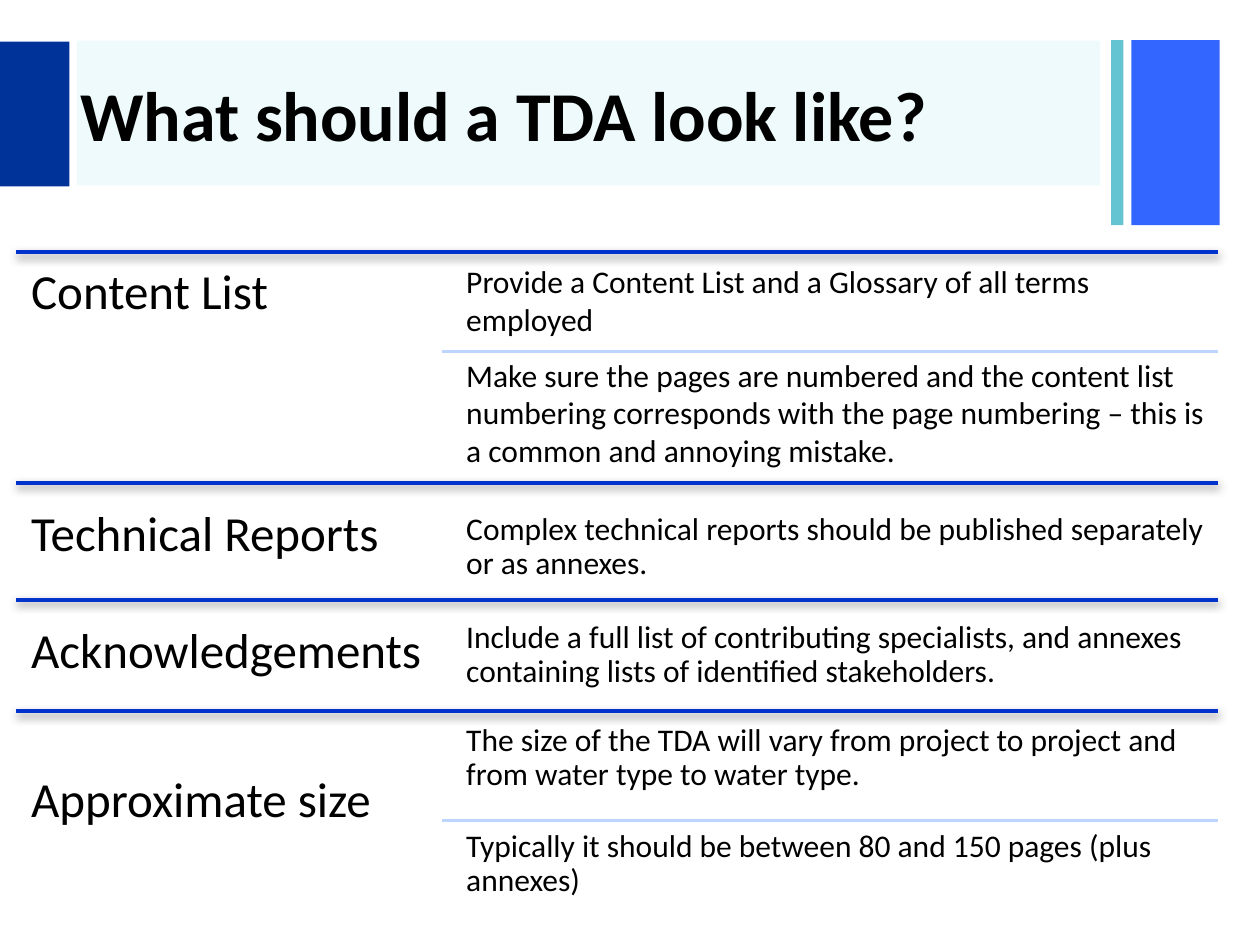
from dataclasses import dataclass

from lxml.etree import SubElement
from pptx import Presentation
from pptx.dml.color import RGBColor
from pptx.enum.shapes import MSO_CONNECTOR as Connector, MSO_SHAPE as Shape
from pptx.enum.text import MSO_ANCHOR as Anchor, MSO_AUTO_SIZE as AutoSize, PP_ALIGN as Align
from pptx.oxml.ns import qn
from pptx.util import Cm, Pt


@dataclass(frozen=True)
class Theme:
    font: str = "Calibri"
    ink: str = "000000"
    navy: str = "003399"
    blue: str = "3366FF"
    teal: str = "65C4D2"
    tint: str = "14C5D0"
    section_rule: str = "0033CC"
    detail_rule: str = "BDD4FF"
    shadow: str = "808080"
    title_size: float = 40
    topic_size: float = 28
    detail_size: float = 18
    section_weight: float = 2.25
    detail_weight: float = 2


THEME = Theme()
LEFT, RIGHT = 0.33, 24.56
TOPIC_WIDTH = 8.59
DETAIL_LEFT, DETAIL_WIDTH = 9.22, 15.34
TOPIC_INSET, DETAIL_INSET = 0.3, 0.18

BLOCKS = [
    (0, 0.84, 1.4, 2.92, THEME.navy, 100),
    (1.55, 0.82, 20.63, 2.92, THEME.tint, 7),
    (22.4, 0.81, 0.25, 3.73, THEME.teal, 100),
    (22.81, 0.81, 1.78, 3.73, THEME.blue, 100),
]

SECTIONS = [
    (5.08, "Content List", 5.08, [
        (5.11, 1.65, 1, "Provide a Content List and a Glossary of all terms employed"),
        (6.99, 2.6, 1, "Make sure the pages are numbered and the content list numbering "
                       "corresponds with the page numbering – this is a common and annoying mistake."),
    ]),
    (9.73, "Technical Reports", 9.96, [
        (10.16, 1.65, 0.9, "Complex technical reports should be published separately or as annexes."),
    ]),
    (12.09, "Acknowledgements", 12.32, [
        (12.34, 1.65, 0.9, "Include a full list of contributing specialists, and annexes "
                           "containing lists of identified stakeholders."),
    ]),
    (14.33, "Approximate size", 15.32, [
        (14.43, 1.65, 0.9, "The size of the TDA will vary from project to project and "
                           "from water type to water type."),
        (16.56, 1.65, 0.9, "Typically it should be between 80 and 150 pages (plus annexes)"),
    ]),
]
DETAIL_RULES = [7.09, 16.54]


def apply(target, values):
    for name, value in values.items():
        setattr(target, name, value)


def write(box, text, size, inset, spacing=1, bold=False, anchor=Anchor.TOP):
    frame = box.text_frame
    margins = {f"margin_{side}": Cm(inset) for side in ("left", "right", "top", "bottom")}
    apply(frame, {"word_wrap": True, "auto_size": AutoSize.NONE, "vertical_anchor": anchor, **margins})
    para = frame.paragraphs[0]
    apply(para, {"alignment": Align.LEFT, "line_spacing": spacing})
    span = para.add_run()
    span.text = text
    apply(span.font, {"name": THEME.font, "size": Pt(size), "bold": bold})
    span.font.color.rgb = RGBColor.from_string(THEME.ink)


def add_block(page, left, top, width, height, color, opacity):
    block = page.shapes.add_shape(Shape.RECTANGLE, Cm(left), Cm(top), Cm(width), Cm(height))
    block.shadow.inherit = False
    block.line.fill.background()
    block.fill.solid()
    block.fill.fore_color.rgb = RGBColor.from_string(color)
    if opacity < 100:
        tone = next(block.element.iter(qn("a:srgbClr")))
        SubElement(tone, qn("a:alpha"), val=str(opacity * 1000))


def add_rule(page, left, top, color, weight, shadowed=False):
    rule = page.shapes.add_connector(Connector.STRAIGHT, Cm(left), Cm(top), Cm(RIGHT), Cm(top))
    rule.line.color.rgb = RGBColor.from_string(color)
    rule.line.width = Pt(weight)
    effects = SubElement(rule.element.find(qn("p:spPr")), qn("a:effectLst"))
    if shadowed:
        shadow = SubElement(effects, qn("a:outerShdw"), blurRad=str(Pt(5)), dist=str(Pt(2)),
                            dir="5400000", rotWithShape="0")
        tone = SubElement(shadow, qn("a:srgbClr"), val=THEME.shadow)
        SubElement(tone, qn("a:alpha"), val="75000")


def add_text(page, left, top, width, height, text, size, inset, spacing):
    box = page.shapes.add_textbox(Cm(left), Cm(top), Cm(width), Cm(height))
    write(box, text, size, inset, spacing)


def add_title(page, text):
    title = page.shapes.title
    apply(title, {"left": Cm(1.37), "top": Cm(0.86), "width": Cm(21.01), "height": Cm(2.84)})
    write(title, text, THEME.title_size, 0.25, bold=True, anchor=Anchor.MIDDLE)
    title.element.getparent().append(title.element)


def add_section(page, rule_top, topic, topic_top, details):
    add_rule(page, LEFT, rule_top, THEME.section_rule, THEME.section_weight, shadowed=True)
    add_text(page, LEFT, topic_top, TOPIC_WIDTH, 2.4, topic, THEME.topic_size, TOPIC_INSET, 0.9)
    for top, height, spacing, text in details:
        add_text(page, DETAIL_LEFT, top, DETAIL_WIDTH, height, text,
                 THEME.detail_size, DETAIL_INSET, spacing)


def main():
    deck = Presentation()
    apply(deck, {"slide_width": Cm(25.4), "slide_height": Cm(19.05)})
    page = deck.slides.add_slide(deck.slide_layouts[5])
    for block in BLOCKS:
        add_block(page, *block)
    add_title(page, "What should a TDA look like?")
    for section in SECTIONS:
        add_section(page, *section)
    for top in DETAIL_RULES:
        add_rule(page, LEFT + TOPIC_WIDTH, top, THEME.detail_rule, THEME.detail_weight)
    deck.save("out.pptx")


if __name__ == "__main__":
    main()
